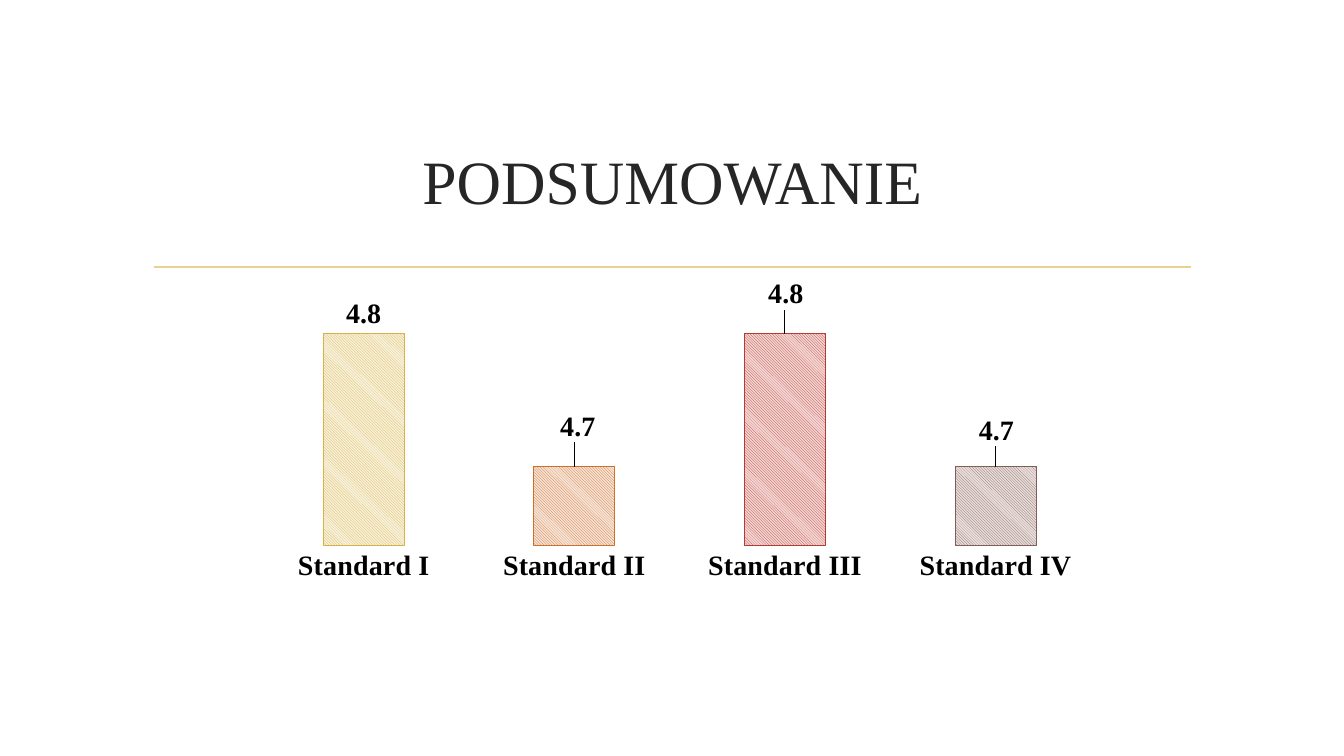
from lxml import etree
from pptx import Presentation
from pptx.chart.data import CategoryChartData
from pptx.dml.color import RGBColor
from pptx.enum.chart import XL_CHART_TYPE, XL_LABEL_POSITION, XL_TICK_MARK
from pptx.enum.dml import MSO_PATTERN
from pptx.enum.shapes import MSO_CONNECTOR
from pptx.enum.text import MSO_ANCHOR, PP_ALIGN
from pptx.oxml import parse_xml
from pptx.oxml.ns import nsdecls, qn
from pptx.util import Inches, Pt

COLUMN = XL_CHART_TYPE.COLUMN_CLUSTERED
OUTSIDE_END = XL_LABEL_POSITION.OUTSIDE_END
NO_TICK = XL_TICK_MARK.NONE
DIAGONAL = MSO_PATTERN.LIGHT_DOWNWARD_DIAGONAL
STRAIGHT = MSO_CONNECTOR.STRAIGHT
MIDDLE = MSO_ANCHOR.MIDDLE
CENTER = PP_ALIGN.CENTER

FONT = "Times New Roman"
# category, value, pattern colour, background colour, label shift (fractions of the chart)
STANDARDS = [
    ("Standard I", 4.8, "D9B247", "F7F0DA", None),
    ("Standard II", 4.7, "CC702D", "F6E2D4", (0.004, -0.039)),
    ("Standard III", 4.8, "B53A31", "F3D5D3", (0.001, -0.039)),
    ("Standard IV", 4.7, "815F56", "E7DEDC", (0.001, -0.031)),
]


def color(hex_string):
    return RGBColor.from_string(hex_string)


def style_font(font, size, hex_string, bold=False):
    font.name = FONT
    font.size = Pt(size)
    font.bold = bold
    font.color.rgb = color(hex_string)


def manual_layout(inner=False, **values):
    """Build a c:layout element from x, y, w and h fractions."""
    modes = '<c:layoutTarget val="inner"/><c:xMode val="edge"/><c:yMode val="edge"/>' if inner else ""
    parts = "".join(f'<c:{name} val="{value}"/>' for name, value in values.items())
    return parse_xml(
        f'<c:layout {nsdecls("c")}><c:manualLayout>{modes}{parts}</c:manualLayout></c:layout>'
    )


def add_title(slide, left, top, width, height):
    box = slide.shapes.add_textbox(Inches(left), Inches(top), Inches(width), Inches(height))
    frame = box.text_frame
    frame.word_wrap = True
    frame.vertical_anchor = MIDDLE
    paragraph = frame.paragraphs[0]
    paragraph.alignment = CENTER
    run = paragraph.add_run()
    run.text = "PODSUMOWANIE"
    style_font(run.font, 44, "262626")


def add_rule(slide, left, top, width):
    rule = slide.shapes.add_connector(
        STRAIGHT, Inches(left), Inches(top), Inches(left + width), Inches(top)
    )
    rule.line.color.rgb = color("E8D191")
    rule.line.width = Pt(1.25)
    etree.SubElement(rule._element.spPr, qn("a:effectLst"))


def style_axes(chart):
    value_axis = chart.value_axis
    value_axis.minimum_scale = 4.64
    value_axis.maximum_scale = 4.82
    value_axis.has_major_gridlines = False
    value_axis.visible = False

    category_axis = chart.category_axis
    category_axis.major_tick_mark = NO_TICK
    category_axis.minor_tick_mark = NO_TICK
    category_axis.format.line.fill.background()
    style_font(category_axis.tick_labels.font, 20, "000000", bold=True)


def style_columns(plot):
    plot.gap_width = 160
    plot.vary_by_categories = False
    series = plot.series[0]
    labels = series.data_labels
    labels.show_value = True
    labels.position = OUTSIDE_END
    style_font(labels.font, 20, "000000", bold=True)

    for index, (_, _, foreground, background, shift) in enumerate(STANDARDS):
        point = series.points[index]
        fill = point.format.fill
        fill.patterned()
        fill.pattern = DIAGONAL
        fill.fore_color.rgb = color(foreground)
        fill.back_color.rgb = color(background)
        point.format.line.color.rgb = color(foreground)
        point.format.line.width = Pt(0.75)

        label = point.data_label
        style_font(label.font, 20, "000000", bold=True)
        label.position = OUTSIDE_END
        if shift:
            label_index = series._element.xpath(f"c:dLbls/c:dLbl/c:idx[@val='{index}']")[0]
            label_index.addnext(manual_layout(x=shift[0], y=shift[1]))


def add_standards_chart(slide, left, top, width, height):
    data = CategoryChartData()
    data.categories = [standard[0] for standard in STANDARDS]
    data.add_series("Series 1", [standard[1] for standard in STANDARDS])
    chart = slide.shapes.add_chart(
        COLUMN, Inches(left), Inches(top), Inches(width), Inches(height), data
    ).chart
    chart.has_title = False
    chart.has_legend = False
    style_font(chart.font, 10, "000000")
    style_axes(chart)
    style_columns(chart.plots[0])

    plot_area = chart._chartSpace.chart.plotArea
    for layout in plot_area.findall(qn("c:layout")):
        plot_area.remove(layout)
    plot_area.insert(0, manual_layout(inner=True, x=0.045, y=0.191, w=0.955, h=0.466))


def main():
    presentation = Presentation()
    presentation.slide_width = Inches(13.33)
    presentation.slide_height = Inches(7.5)
    slide = presentation.slides.add_slide(presentation.slide_layouts[6])
    add_rule(slide, 1.53, 2.65, 10.28)
    add_title(slide, 1.42, 1.07, 10.5, 1.43)
    add_standards_chart(slide, 2.17, 2.08, 8.75, 5.08)
    presentation.save("out.pptx")


if __name__ == "__main__":
    main()
